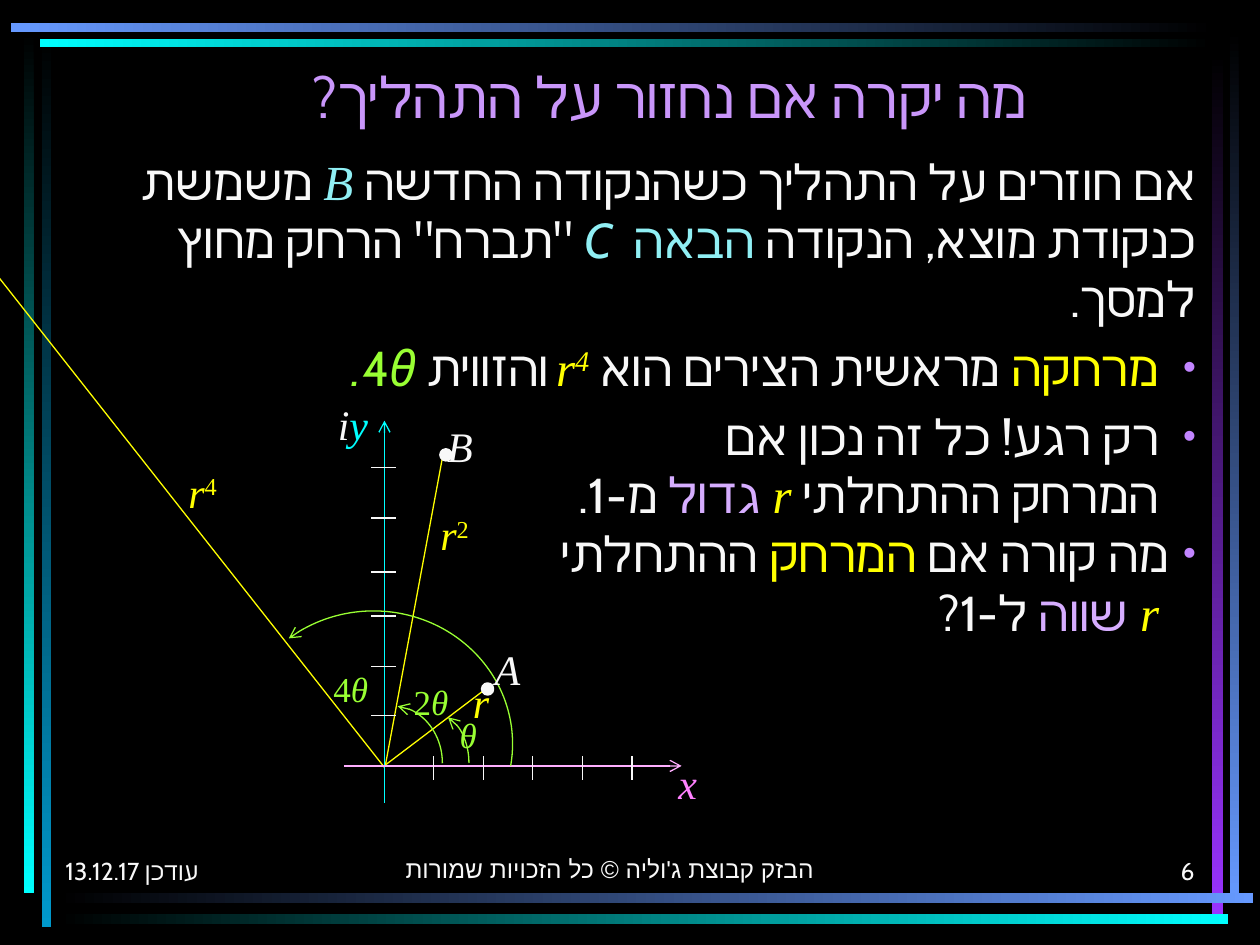
import pptx
import pptx.util
import pptx.dml.color
import pptx.enum.shapes
import pptx.enum.text
import pptx.oxml.ns
from lxml import etree

Cm, Pt = pptx.util.Cm, pptx.util.Pt
RGB = pptx.dml.color.RGBColor.from_string
qn = pptx.oxml.ns.qn
SHAPE = pptx.enum.shapes.MSO_SHAPE
ALIGN = pptx.enum.text.PP_ALIGN
ANCHOR = pptx.enum.text.MSO_ANCHOR

COLORS = {
    "black": "000000", "white": "F8F8F8", "title": "C996FA", "bullet": "C285FF",
    "sky": "90EFF4", "yellow": "FFFF00", "green": "99FF33", "lilac": "D6ADFF",
    "cyan": "00FFFF", "pink": "FF81FF", "pale pink": "FFAFFF",
    "teal": "0099CC", "blue": "6699FF", "purple": "9933FF",
}
SANS, SERIF = "Cabin", "Times New Roman"


def write_paragraph(paragraph, runs, size, alignment):
    """Fill a right-to-left paragraph; a run is text, font, colour, italic, superscript."""
    paragraph.alignment = alignment
    paragraph._p.get_or_add_pPr().set("rtl", "1")
    for text, typeface, color, italic, superscript in runs:
        run = paragraph.add_run()
        run.text = text
        font_format = {"name": typeface, "size": Pt(size), "italic": italic, "bold": False}
        for name, value in font_format.items():
            setattr(run.font, name, value)
        run.font.color.rgb = RGB(COLORS[color])
        properties = run._r.get_or_add_rPr()
        etree.SubElement(properties, qn("a:cs")).set("typeface", typeface)
        if superscript:
            properties.set("baseline", "30000")


def draw_outline(shape, color, width=0.75, arrow=False):
    """Colour the line, optionally end it with an arrowhead, and drop the shadow."""
    shape.line.color.rgb = RGB(COLORS[color])
    shape.line.width = Pt(width)
    if arrow:
        line = shape.line._get_or_add_ln()
        etree.SubElement(line, qn("a:tailEnd")).set("type", "arrow")
    etree.SubElement(shape._element.spPr, qn("a:effectLst"))


presentation = pptx.Presentation()
presentation.slide_width, presentation.slide_height = Cm(25.4), Cm(19.05)
slide = presentation.slides.add_slide(presentation.slide_layouts[1])
shapes = slide.shapes
slide.background.fill.solid()
slide.background.fill.fore_color.rgb = RGB(COLORS["black"])

# Frame strips fading to black: left, top, width, height, start and end colour
strips = [
    (0.84, 0.71, 0.2, 17.98, "black", "teal"),
    (0.48, 0.64, 0.2, 17.37, "black", "cyan"),
    (24.79, 0.61, 0.18, 17.6, "black", "blue"),
    (24.43, 1.07, 0.23, 17.35, "black", "purple"),
    (1.14, 18.01, 24.13, 0.2, "black", "blue"),
    (1.14, 18.42, 23.62, 0.2, "black", "cyan"),
    (0.81, 0.79, 23.67, 0.15, "cyan", "black"),
    (0.22, 0.47, 24.28, 0.18, "blue", "black"),
]
for left, top, width, height, start, end in strips:
    strip = shapes.add_shape(SHAPE.RECTANGLE, Cm(left), Cm(top), Cm(width), Cm(height))
    strip.shadow.inherit = False
    strip.line.fill.background()
    strip.fill.gradient()
    strip.fill.gradient_angle = 270 if height > width else 0
    for stop, color in zip(strip.fill.gradient_stops, (start, end)):
        stop.color.rgb = RGB(COLORS[color])

# Title and body placeholders
title, body = shapes.title, slide.placeholders[1]
for placeholder, box in ((title, (0.94, 1.12, 25.4, 2.21)), (body, (0.71, 2.92, 23.65, 16))):
    for name, value in zip(("left", "top", "width", "height"), box):
        setattr(placeholder, name, Cm(value))
    frame_format = {"word_wrap": True, "vertical_anchor": ANCHOR.TOP,
                    "auto_size": pptx.enum.text.MSO_AUTO_SIZE.NONE}
    for name, value in frame_format.items():
        setattr(placeholder.text_frame, name, value)
write_paragraph(title.text_frame.paragraphs[0],
                [(" מה יקרה אם נחזור על התהליך?", SANS, "title", False, False)],
                32.4, ALIGN.CENTER)

# Body paragraphs: indent, hanging, space before, bullet, runs
paragraphs = [
    (0, 0, 0, False, [
        ("אם חוזרים על התהליך כשהנקודה החדשה ", SANS, "white", False, False),
        ("B", SERIF, "sky", True, False),
        (" משמשת כנקודת מוצא, הנקודה ", SANS, "white", False, False),
        ("הבאה  ", SANS, "sky", False, False),
        ("C", SANS, "sky", True, False),
        (' "תברח" הרחק מחוץ למסך. ', SANS, "white", False, False)]),
    (0.74, 0.74, 5.6, True, [
        ("מרחקה", SANS, "yellow", False, False),
        (" מראשית הצירים הוא ", SANS, "white", False, False),
        ("r", SERIF, "yellow", True, False),
        ("4 ", SERIF, "yellow", True, True),
        ("והזווית ", SANS, "white", False, False),
        ("4", SANS, "green", False, False),
        ("θ.", SANS, "green", True, False)]),
    (0.74, 0.74, 5.6, True, [("רק רגע! כל זה נכון אם ", SANS, "white", False, False)]),
    (0.74, 0, 0, False, [
        ("המרחק ההתחלתי ", SANS, "white", False, False),
        ("r ", SERIF, "yellow", True, False),
        ("גדול", SANS, "lilac", False, False),
        (" מ-", SANS, "white", False, False),
        ("1.", SANS, "white", False, False)]),
    (0.53, 0.53, 0, True, [
        ("מה קורה אם ", SANS, "white", False, False),
        ("המרחק", SANS, "yellow", False, False),
        (" ההתחלתי", SANS, "white", False, False)]),
    (0.74, 0, 0, False, [
        ("r ", SERIF, "yellow", True, False),
        ("שווה", SANS, "lilac", False, False),
        (" ל-1?", SANS, "white", False, False)]),
]
for index, (indent, hanging, space, bullet, runs) in enumerate(paragraphs):
    frame = body.text_frame
    paragraph = frame.add_paragraph() if index else frame.paragraphs[0]
    write_paragraph(paragraph, runs, 28, ALIGN.RIGHT)
    paragraph.space_before = Pt(space)
    properties = paragraph._p.get_or_add_pPr()
    properties.set("marL", str(Cm(indent)))
    properties.set("indent", str(-Cm(hanging)))
    if bullet:
        bullet_color = etree.SubElement(properties, qn("a:buClr"))
        etree.SubElement(bullet_color, qn("a:srgbClr")).set("val", COLORS["bullet"])
        etree.SubElement(properties, qn("a:buSzPct")).set("val", "75000")
        etree.SubElement(properties, qn("a:buChar")).set("char", "•")
    else:
        etree.SubElement(properties, qn("a:buNone"))

# Rays, axes and tick marks: start, end, colour, arrow
lines = [
    (7.75, 15.47, -0.71, 4.72, "yellow", False),
    (7.77, 15.42, 9.75, 13.92, "yellow", False),
    (7.77, 15.42, 8.92, 9.22, "yellow", False),
    (7.75, 16.18, 7.75, 8.48, "cyan", True),
    (6.93, 15.44, 13.74, 15.44, "pale pink", True),
]
lines += [(8.74 + step, 15.24, 8.74 + step, 15.72, "white", False)
          for step in (0, 1, 2, 3, 4)]
lines += [(7.98, y, 7.47, y, "white", False)
          for y in (14.43, 13.44, 12.42, 11.53, 10.44, 9.42)]
for x1, y1, x2, y2, color, arrow in lines:
    line = shapes.add_connector(pptx.enum.shapes.MSO_CONNECTOR.STRAIGHT,
                                Cm(x1), Cm(y1), Cm(x2), Cm(y2))
    draw_outline(line, color, arrow=arrow)

# Angle arcs, mirrored and turned to sweep up from the x axis
arcs = [
    (4.85, 12.19, 5.36, 5.61, 156.57, 23.25),
    (7.75, 14.68, 2.01, 1.4, 162, 205.88),
    (6.76, 14.38, 2.31, 2.01, 162, 212.89),
]
for left, top, width, height, start, end in arcs:
    arc = shapes.add_shape(SHAPE.ARC, Cm(left), Cm(top), Cm(width), Cm(height))
    arc.adjustments[0], arc.adjustments[1] = start, end
    arc.rotation = 90
    arc._element.spPr.find(qn("a:xfrm")).set("flipH", "1")
    arc.fill.background()
    draw_outline(arc, "green", arrow=True)

# Points A and B
for left, top in ((9.73, 13.79), (8.89, 9.07)):
    point = shapes.add_shape(SHAPE.OVAL, Cm(left), Cm(top), Cm(0.2), Cm(0.2))
    point.fill.solid()
    point.fill.fore_color.rgb = RGB(COLORS["white"])
    draw_outline(point, "white", width=2)

# Diagram labels and footer: box, size, alignment, anchor, runs
labels = [(left, top, width, size / 20 + 0.1, size, ALIGN.RIGHT, ANCHOR.TOP,
           [(text, SERIF, *style) for text, *style in runs])
          for left, top, width, size, runs in [
    (6.1, 13.34, 1.57, 20, [("4", "green", False, False), ("θ", "green", True, False)]),
    (7.72, 13.59, 1.57, 20, [("2", "green", False, False), ("θ", "green", True, False)]),
    (9.25, 14.25, 0.61, 20, [("θ", "green", True, False)]),
    (3.25, 9.27, 1.37, 24, [("r", "yellow", True, False), ("4", "yellow", False, True)]),
    (8.38, 10.13, 1.32, 24, [("r", "yellow", True, False), ("2", "yellow", False, True)]),
    (9.5, 13.51, 0.61, 24, [("r", "yellow", True, False)]),
    (13.69, 15.14, 0.61, 24, [("x", "pink", True, False)]),
    (6.45, 7.9, 1.22, 24, [("i", "white", True, False), ("y", "cyan", True, False)]),
    (10.13, 12.85, 0.61, 24, [("A", "white", True, False)]),
    (9.17, 8.36, 0.61, 24, [("B", "white", True, False)]),
]]
labels += [(left, top, width, 1.27, 14, alignment, ANCHOR.BOTTOM,
            [(text, typeface, "white", False, False)])
           for left, top, width, alignment, typeface, text in [
    (1.07, 16.71, 5.28, ALIGN.LEFT, SANS, "עודכן 13.12.17"),
    (19.05, 16.71, 5.28, ALIGN.RIGHT, SANS, "6"),
    (7.29, 16.66, 10.01, ALIGN.CENTER, "Arial", "הבזק קבוצת ג'וליה © כל הזכויות שמורות"),
]]
for left, top, width, height, size, alignment, anchor, runs in labels:
    label = shapes.add_textbox(Cm(left), Cm(top), Cm(width), Cm(height))
    label.text_frame.word_wrap = True
    label.text_frame.vertical_anchor = anchor
    write_paragraph(label.text_frame.paragraphs[0], runs, size, alignment)

presentation.save("out.pptx")
